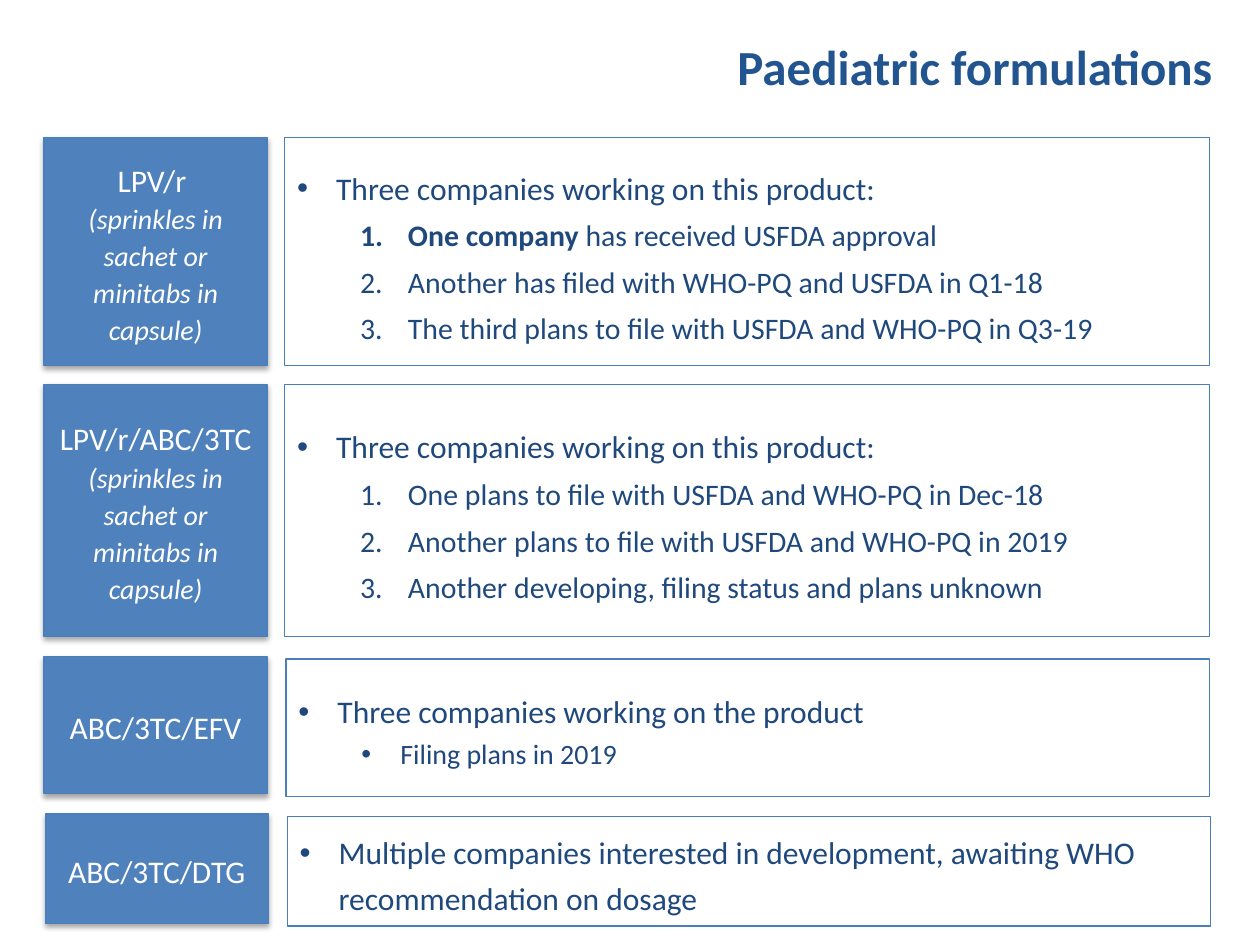
import pptx
import pptx.util
import pptx.dml.color
import pptx.enum.shapes
import pptx.enum.text
import pptx.oxml.ns
import lxml.etree
from dataclasses import dataclass

Inches = pptx.util.Inches
RGB = pptx.dml.color.RGBColor.from_string
ALIGN = pptx.enum.text.PP_ALIGN


@dataclass(frozen=True)
class Theme:
    font: str = "Calibri"
    title: str = "225590"
    text: str = "1F497D"
    label: str = "FFFFFF"
    fill: str = "4F81BD"
    line: str = "4B7EBC"
    title_size: int = 28
    main_size: int = 18
    number_size: int = 17
    small_size: int = 16


theme = Theme()


def add_run(p, text, size, color, bold=False, italic=False):
    r = p.add_run()
    r.text = text
    r.font.name = theme.font
    r.font.size = pptx.util.Pt(size)
    r.font.color.rgb = RGB(color)
    r.font.bold = bold
    r.font.italic = italic


def add_box(s, left, top, width, height):
    sp = s.shapes.add_shape(
        pptx.enum.shapes.MSO_SHAPE.RECTANGLE,
        Inches(left), Inches(top), Inches(width), Inches(height))
    sp.line.color.rgb = RGB(theme.line)
    sp.line.width = pptx.util.Pt(0.75)
    sp.text_frame.word_wrap = True
    sp.text_frame.vertical_anchor = pptx.enum.text.MSO_ANCHOR.MIDDLE
    return sp


bullet = ("buChar", {"char": "•"})
number = ("buAutoNum", {"type": "arabicPeriod"})
styles = {
    "main": (0, 0.31, 0.31, theme.main_size, bullet),
    "number": (1, 0.88, 0.38, theme.number_size, number),
    "sub": (1, 0.81, 0.31, theme.small_size, bullet),
}
form = "(sprinkles in sachet or minitabs in capsule)"
rows = [
    ("LPV/r ", form, (0.35, 1.09), (2.26, 1.09), 7.34, 1.81, 1.3, [
        ("main", "", "Three companies working on this product:"),
        ("number", "One company ", "has received USFDA approval"),
        ("number", "", "Another has filed with WHO-PQ and USFDA in Q1-18"),
        ("number", "", "The third plans to file with USFDA and WHO-PQ in Q3-19")]),
    ("LPV/r/ABC/3TC", form, (0.35, 3.05), (2.26, 3.05), 7.34, 2, 1.3, [
        ("main", "", "Three companies working on this product:"),
        ("number", "", "One plans to file with USFDA and WHO-PQ in Dec-18"),
        ("number", "", "Another plans to file with USFDA and WHO-PQ in 2019"),
        ("number", "", "Another developing, filing status and plans unknown")]),
    ("ABC/3TC/EFV", "", (0.35, 5.21), (2.27, 5.23), 7.33, 1.09, 1.2, [
        ("main", "", "Three companies working on the product"),
        ("sub", "", "Filing plans in 2019")]),
    ("ABC/3TC/DTG", "", (0.36, 6.46), (2.28, 6.48), 7.33, 0.87, 1.2, [
        ("main", "", "Multiple companies interested in development, "
                     "awaiting WHO recommendation on dosage")]),
]

prs = pptx.Presentation()
prs.slide_width = Inches(10)
prs.slide_height = Inches(7.5)
s = prs.slides.add_slide(prs.slide_layouts[5])

title = s.shapes.title
title.left, title.top = Inches(1.67), Inches(0.21)
title.width, title.height = Inches(8.05), Inches(0.63)
p = title.text_frame.paragraphs[0]
p.alignment = ALIGN.RIGHT
add_run(p, "Paediatric formulations", theme.title_size, theme.title, bold=True)

for name, detail, label_at, box_at, width, height, spacing, items in rows:
    sp = add_box(s, *label_at, 1.77, height)
    sp.fill.solid()
    sp.fill.fore_color.rgb = RGB(theme.fill)
    tf = sp.text_frame
    p = tf.paragraphs[0]
    add_run(p, name, theme.main_size, theme.label)
    if detail:
        add_run(tf.add_paragraph(), detail, theme.small_size, theme.label, italic=True)
    for p in tf.paragraphs:
        p.alignment = ALIGN.CENTER
        p.line_spacing = 1.1

    sp = add_box(s, *box_at, width, height)
    sp.fill.background()
    sp.shadow.inherit = False
    tf = sp.text_frame
    for i, (style, strong, text) in enumerate(items):
        level, margin, hanging, size, (tag, attrs) = styles[style]
        p = tf.add_paragraph() if i else tf.paragraphs[0]
        p.level = level
        p.alignment = ALIGN.LEFT
        p.line_spacing = spacing
        pPr = p._p.get_or_add_pPr()
        pPr.set("marL", str(Inches(margin)))
        pPr.set("indent", str(-Inches(hanging)))
        if tag == "buChar":
            lxml.etree.SubElement(pPr, pptx.oxml.ns.qn("a:buFont"), typeface="Arial")
        lxml.etree.SubElement(pPr, pptx.oxml.ns.qn(f"a:{tag}"), **attrs)
        if strong:
            add_run(p, strong, size, theme.text, bold=True)
        add_run(p, text, size, theme.text)

prs.save("out.pptx")
